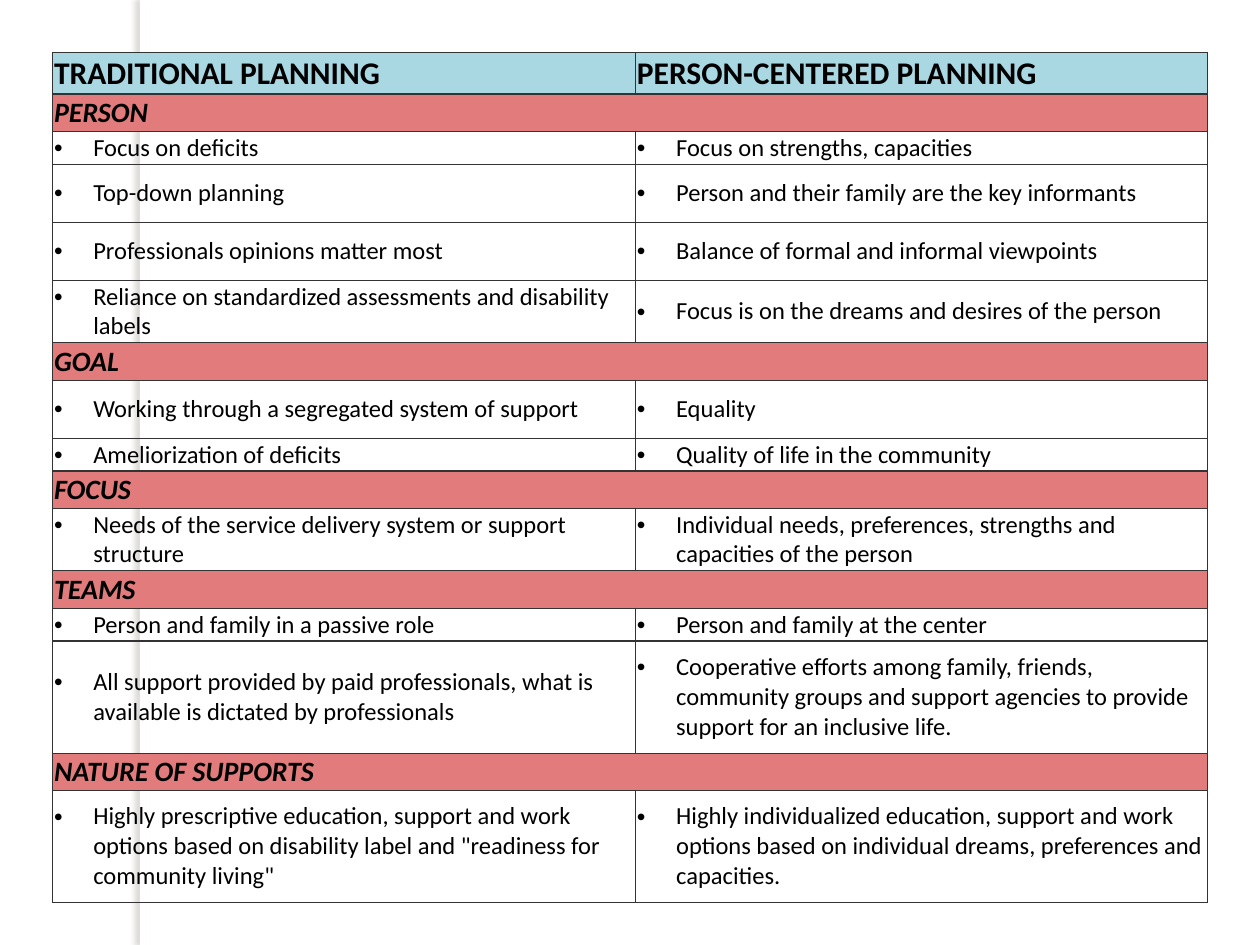
from dataclasses import dataclass

from lxml.etree import SubElement
from pptx import Presentation
from pptx.dml.color import RGBColor
from pptx.enum.shapes import MSO_SHAPE
from pptx.enum.text import MSO_ANCHOR
from pptx.oxml.ns import qn
from pptx.util import Cm, Pt

COLORS = {
    "header": "A9D7E2",
    "section": "E17B7C",
    "border": "333333",
    "text": "000000",
    "strip": "FFFFFF",
    "shadow": "736F63",
}
SHORT, MEDIUM, TALL = 0.61, 1.17, 2.26


@dataclass
class Row:
    left: str
    right: str
    height: float = SHORT


@dataclass
class Section:
    title: str
    rows: list[Row]


HEADER = Row("TRADITIONAL PLANNING", "PERSON-CENTERED PLANNING")
SECTIONS = [
    Section("PERSON", [
        Row("Focus on deficits", "Focus on strengths, capacities"),
        Row("Top-down planning", "Person and their family are the key informants", MEDIUM),
        Row("Professionals opinions matter most",
            "Balance of formal and informal viewpoints", MEDIUM),
        Row("Reliance on standardized assessments and disability labels",
            "Focus is on the dreams and desires of the person", MEDIUM),
    ]),
    Section("GOAL", [
        Row("Working through a segregated system of support", "Equality", MEDIUM),
        Row("Ameliorization of deficits", "Quality of life in the community"),
    ]),
    Section("FOCUS", [
        Row("Needs of the service delivery system or support structure",
            "Individual needs, preferences, strengths and capacities of the person", MEDIUM),
    ]),
    Section("TEAMS", [
        Row("Person and family in a passive role", "Person and family at the center"),
        Row("All support provided by paid professionals, what is available is "
            "dictated by professionals",
            "Cooperative efforts among family, friends, community groups and support "
            "agencies to provide support for an inclusive life.", TALL),
    ]),
    Section("NATURE OF SUPPORTS", [
        Row("Highly prescriptive education, support and work options based on "
            'disability label and "readiness for community living"',
            "Highly individualized education, support and work options based on "
            "individual dreams, preferences and capacities.", TALL),
    ]),
]


def rgb(name: str) -> RGBColor:
    return RGBColor.from_string(COLORS[name])


def add_strip(s) -> None:
    sp = s.shapes.add_shape(MSO_SHAPE.RECTANGLE, Cm(2.82), 0, Cm(0.2), Cm(19.05))
    sp.fill.solid()
    sp.fill.fore_color.rgb = rgb("strip")
    sp.line.fill.background()
    effects = SubElement(sp._element.spPr, qn("a:effectLst"))
    shadow = SubElement(effects, qn("a:outerShdw"), blurRad=str(Pt(3)),
                        dist=str(Pt(3)), dir=str(180 * 60000), rotWithShape="0")
    color = SubElement(shadow, qn("a:srgbClr"), val=COLORS["shadow"])
    SubElement(color, qn("a:alpha"), val="25000")


def set_borders(cell) -> None:
    tcPr = cell._tc.get_or_add_tcPr()
    for side in ("lnL", "lnR", "lnT", "lnB"):
        ln = SubElement(tcPr, qn(f"a:{side}"), w=str(Pt(0.75)))
        SubElement(SubElement(ln, qn("a:solidFill")), qn("a:srgbClr"), val=COLORS["border"])


def write(cell, text: str, *, size: float, bold: bool = False, italic: bool = False,
          bullet: bool = False) -> None:
    p = cell.text_frame.paragraphs[0]
    if bullet:
        pPr = p._p.get_or_add_pPr()
        pPr.set("marL", str(Cm(0.79)))
        pPr.set("indent", str(-Cm(0.79)))
        SubElement(pPr, qn("a:buFont"), typeface="Arial")
        SubElement(pPr, qn("a:buChar"), char="•")
    r = p.add_run()
    r.text = text
    f = r.font
    f.name, f.size, f.bold, f.italic = "Calibri", Pt(size), bold, italic
    f.color.rgb = rgb("text")


def style_cell(cell, fill: str | None) -> None:
    cell.margin_left = cell.margin_right = cell.margin_top = cell.margin_bottom = Cm(0.03)
    cell.vertical_anchor = MSO_ANCHOR.MIDDLE
    set_borders(cell)
    if fill:
        cell.fill.solid()
        cell.fill.fore_color.rgb = rgb(fill)
    else:
        cell.fill.background()


def fill_row(tbl, i: int, row: Row, fill: str | None = None, **fmt) -> None:
    tbl.rows[i].height = Cm(row.height)
    for j, text in enumerate((row.left, row.right)):
        cell = tbl.cell(i, j)
        style_cell(cell, fill)
        if text:
            write(cell, text, **fmt)


def add_planning_table(s) -> None:
    count = 1 + sum(1 + len(section.rows) for section in SECTIONS)
    tbl = s.shapes.add_table(count, 2, Cm(1.06), Cm(1.06), Cm(23.28), Cm(16.97)).table
    tbl.first_row = tbl.horz_banding = False
    for col, width in zip(tbl.columns, (11.75, 11.53)):
        col.width = Cm(width)
    fill_row(tbl, 0, HEADER, "header", size=18, bold=True)
    i = 1
    for section in SECTIONS:
        fill_row(tbl, i, Row(section.title, ""), "section", size=16, bold=True, italic=True)
        tbl.cell(i, 0).merge(tbl.cell(i, 1))
        for i, row in enumerate(section.rows, i + 1):
            fill_row(tbl, i, row, size=14, bullet=True)
        i += 1


def main() -> None:
    prs = Presentation()
    prs.slide_width, prs.slide_height = Cm(25.4), Cm(19.05)
    s = prs.slides.add_slide(prs.slide_layouts[6])
    add_strip(s)
    add_planning_table(s)
    prs.save("out.pptx")


if __name__ == "__main__":
    main()
